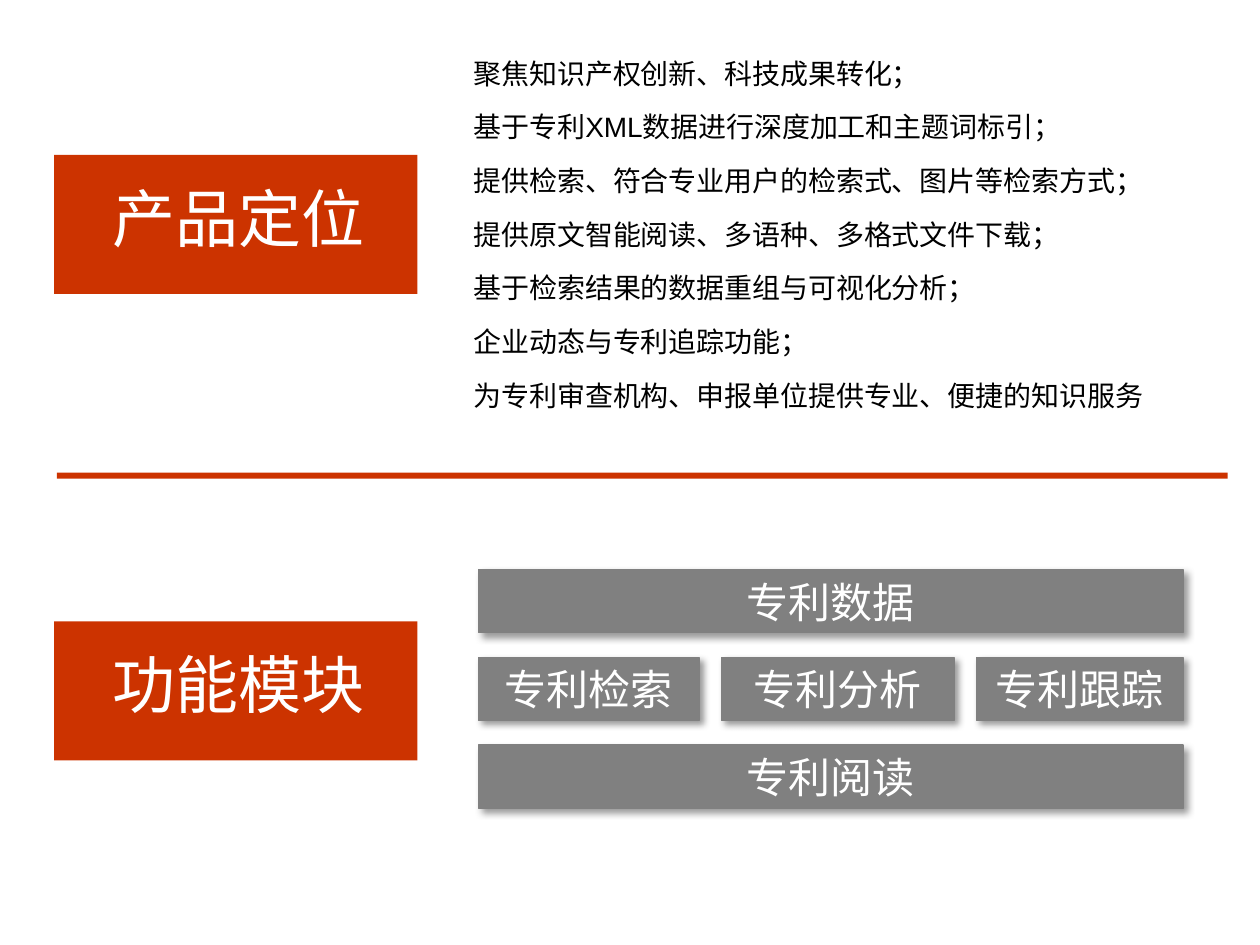
from dataclasses import dataclass

from lxml import etree
from pptx import Presentation
from pptx.dml.color import RGBColor
from pptx.enum.shapes import MSO_SHAPE
from pptx.enum.text import MSO_ANCHOR, PP_ALIGN
from pptx.oxml.ns import qn
from pptx.util import Pt

RECT = MSO_SHAPE.RECTANGLE
MIDDLE = MSO_ANCHOR.MIDDLE
LEFT, CENTER = PP_ALIGN.LEFT, PP_ALIGN.CENTER


@dataclass(frozen=True)
class Theme:
    accent: RGBColor = RGBColor(0xCC, 0x33, 0x00)
    module: RGBColor = RGBColor(0x80, 0x80, 0x80)
    light: RGBColor = RGBColor(0xFF, 0xFF, 0xFF)
    dark: RGBColor = RGBColor(0x00, 0x00, 0x00)
    cjk_font: str = "Noto Sans CJK SC"
    body_font: str = "Arial"
    label_size: int = 36
    module_size: int = 24
    body_size: int = 16


THEME = Theme()

POSITIONING = [
    "聚焦知识产权创新、科技成果转化；",
    "基于专利XML数据进行深度加工和主题词标引；",
    "提供检索、符合专业用户的检索式、图片等检索方式；",
    "提供原文智能阅读、多语种、多格式文件下载；",
    "基于检索结果的数据重组与可视化分析；",
    "企业动态与专利追踪功能；",
    "为专利审查机构、申报单位提供专业、便捷的知识服务",
]
# Each row lists its modules with their share of the row's width.
MODULE_ROWS = [
    [("专利数据", 1)],
    [("专利检索", 126), ("专利分析", 133), ("专利跟踪", 118)],
    [("专利阅读", 1)],
]


def write(sp, lines, size, color, font, align=CENTER, spacing=None):
    tf = sp.text_frame
    tf.word_wrap = True
    tf.vertical_anchor = MIDDLE
    tf.text = "\n".join(lines)
    for p in tf.paragraphs:
        p.alignment = align
        p.line_spacing = spacing
        p.font.size = Pt(size)
        p.font.color.rgb = color
        p.font.name = font


def add_block(slide, box, fill):
    sp = slide.shapes.add_shape(RECT, *map(Pt, box))
    sp.shadow.inherit = False
    sp.fill.solid()
    sp.fill.fore_color.rgb = fill
    sp.line.fill.background()
    return sp


def add_drop_shadow(sp):
    """Soft black shadow falling to the lower right."""
    effects = sp._element.spPr.find(qn("a:effectLst"))
    shadow = etree.SubElement(
        effects, qn("a:outerShdw"), blurRad=str(Pt(4)), dist=str(Pt(3)),
        dir="2700000", algn="tl", rotWithShape="0")
    color = etree.SubElement(shadow, qn("a:srgbClr"), val=str(THEME.dark))
    etree.SubElement(color, qn("a:alpha"), val="40000")


def add_label(slide, box, text):
    """Accent block with its title set slightly above the middle."""
    add_block(slide, box, THEME.accent)
    x, y, w, h = box
    tb = slide.shapes.add_textbox(Pt(x + 3), Pt(y), Pt(w - 3), Pt(h - 8))
    write(tb, [text], THEME.label_size, THEME.light, THEME.cjk_font)


def add_positioning(slide, box):
    tb = slide.shapes.add_textbox(*map(Pt, box))
    write(tb, POSITIONING, THEME.body_size, THEME.dark, THEME.body_font,
          LEFT, 1.6)


def add_module(slide, box, text):
    sp = add_block(slide, box, THEME.module)
    sp.line.color.rgb = THEME.module
    sp.line.width = Pt(0.75)
    add_drop_shadow(sp)
    tf = sp.text_frame
    tf.margin_top = tf.margin_bottom = 0
    write(sp, [text], THEME.module_size, THEME.light, THEME.body_font)


def add_modules(slide, box, row_gap=14, col_gap=12.75):
    left, top, width, height = box
    row_h = (height - row_gap * (len(MODULE_ROWS) - 1)) / len(MODULE_ROWS)
    for i, row in enumerate(MODULE_ROWS):
        x, y = left, top + i * (row_h + row_gap)
        usable = width - col_gap * (len(row) - 1)
        total = sum(share for _, share in row)
        for text, share in row:
            w = usable * share / total
            add_module(slide, (x, y, w, row_h), text)
            x += w + col_gap


def main():
    prs = Presentation()
    prs.slide_width, prs.slide_height = Pt(720), Pt(540)
    slide = prs.slides.add_slide(prs.slide_layouts[6])
    add_label(slide, (31, 88.5, 207.5, 79.5), "产品定位")
    add_block(slide, (32.5, 270, 669, 3.5), THEME.accent)
    add_label(slide, (31, 355, 207.5, 79.5), "功能模块")
    add_positioning(slide, (263.5, 26, 442, 204))
    add_modules(slide, (273.5, 325.5, 402.5, 136.5))
    prs.save("out.pptx")


if __name__ == "__main__":
    main()
